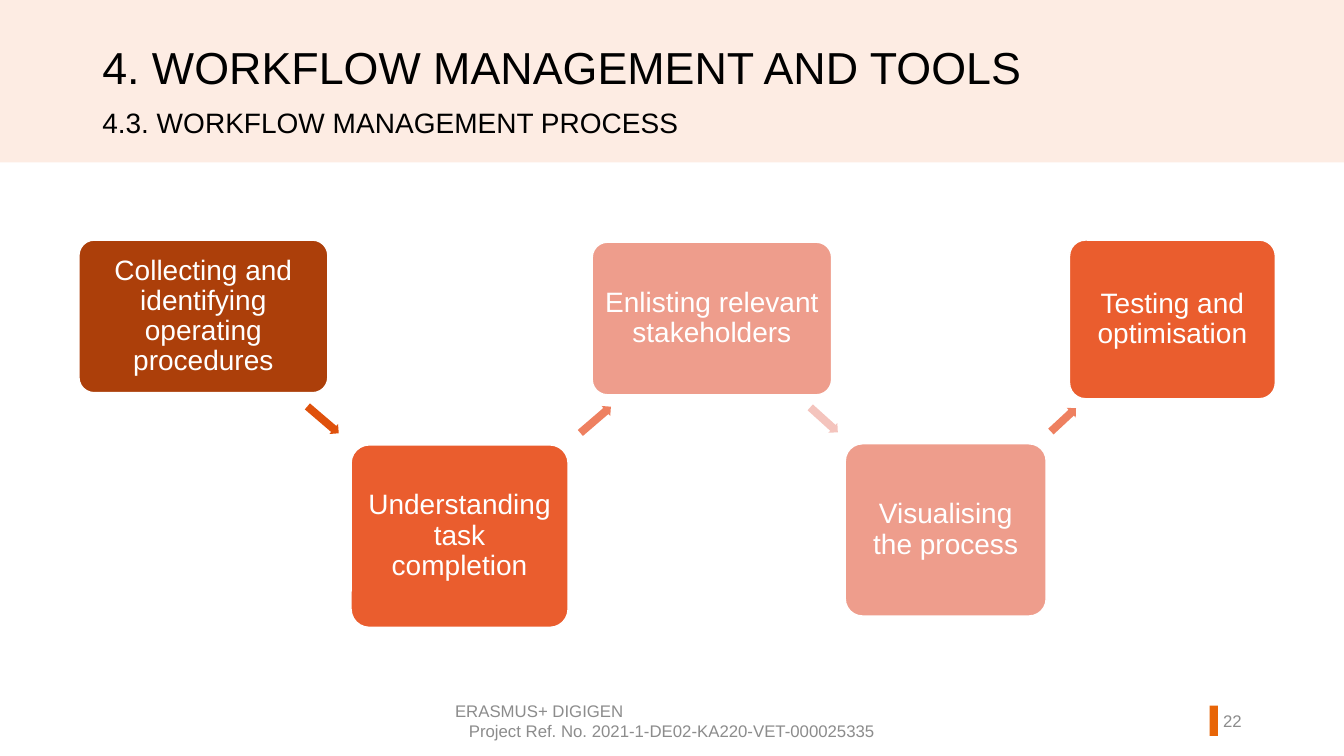
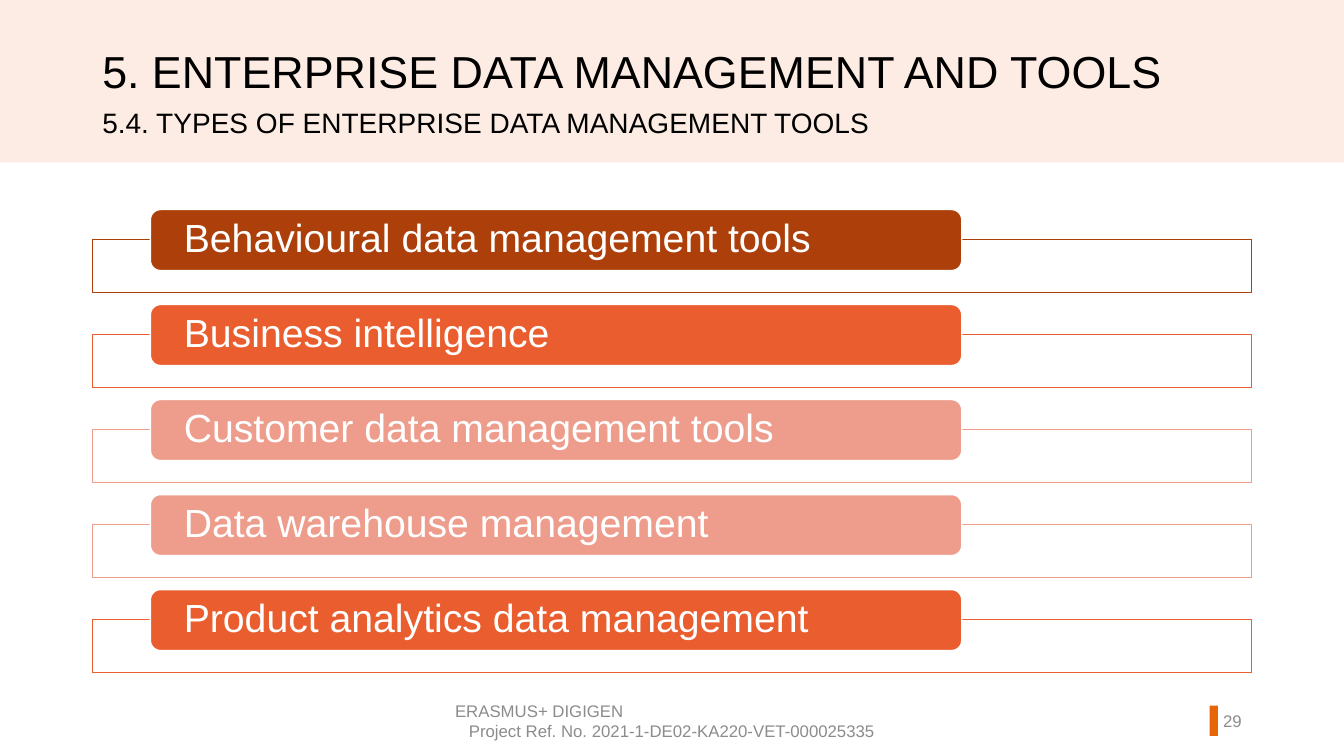
from dataclasses import dataclass
from typing import Any

from lxml.etree import SubElement
from pptx import Presentation
from pptx.dml.color import RGBColor
from pptx.enum.shapes import MSO_SHAPE
from pptx.enum.text import MSO_ANCHOR, PP_ALIGN
from pptx.oxml.ns import qn
from pptx.util import Pt


@dataclass(frozen=True)
class Theme:
    font: str = "Arial"
    black: str = "000000"
    white: str = "FFFFFF"
    grey: str = "8C8C8C"
    band: str = "FDECE3"
    marker: str = "E86507"
    brown: str = "AC3F0A"
    orange: str = "EA5D2E"
    salmon: str = "EE9D8C"
    arrow_dark: str = "DF510C"
    arrow_mid: str = "EE8060"
    arrow_pale: str = "F4C4BD"
    title_size: float = 32
    subtitle_size: float = 20
    step_size: float = 20
    tool_size: float = 28
    footer_size: float = 12


@dataclass(frozen=True)
class Area:
    left: float
    top: float
    width: float
    height: float

    def lengths(self) -> tuple:
        return Pt(self.left), Pt(self.top), Pt(self.width), Pt(self.height)


@dataclass(frozen=True)
class Step:
    text: str
    color: str
    area: Area


@dataclass(frozen=True)
class Arrow:
    left: float
    width: float
    angle: float
    color: str


@dataclass(frozen=True)
class Tool:
    text: str
    color: str


THEME = Theme()
LEFT, CENTER, RIGHT = PP_ALIGN.LEFT, PP_ALIGN.CENTER, PP_ALIGN.RIGHT

FOOTER = [
    ("ERASMUS+ DIGIGEN", LEFT),
    ("Project Ref. No. 2021-1-DE02-KA220-VET-000025335", CENTER),
]

STEPS = [
    Step("Collecting and identifying operating procedures", THEME.brown,
         Area(56.4, 171.5, 177.8, 109)),
    Step("Understanding task completion", THEME.orange, Area(250.8, 317.8, 155, 130.3)),
    Step("Enlisting relevant stakeholders", THEME.salmon, Area(423, 173, 171, 109)),
    Step("Visualising the process", THEME.salmon, Area(603.8, 317, 143.5, 123)),
    Step("Testing and optimisation", THEME.orange, Area(764, 171.5, 147, 113.3)),
]

ARROW_TOP, ARROW_HEIGHT = 295.2, 9.4
ARROWS = [
    Arrow(216, 29.5, 40.6, THEME.arrow_dark),
    Arrow(411.1, 28.8, 319.3, THEME.arrow_mid),
    Arrow(575.3, 26.6, 42.1, THEME.arrow_pale),
    Arrow(747.4, 24.5, 317.1, THEME.arrow_mid),
]

TOOLS = [
    Tool("Behavioural data management tools", THEME.brown),
    Tool("Business intelligence", THEME.orange),
    Tool("Customer data management tools", THEME.salmon),
    Tool("Data warehouse management", THEME.salmon),
    Tool("Product analytics data management", THEME.orange),
]
TOOL_TOP, TOOL_PITCH, FRAME_DROP = 149.7, 67.86, 21.5


# Formatting helpers

def apply(target: Any, values: dict) -> None:
    for name, value in values.items():
        setattr(target, name, value)


def write(box: Any, lines: list, size: float, color: str, spacing: float = 1.0,
          anchor: Any = MSO_ANCHOR.MIDDLE, insets: tuple = (7.2, 3.6)) -> None:
    """Fill a shape with (text, alignment) paragraphs."""
    across, down = Pt(insets[0]), Pt(insets[1])
    frame = box.text_frame
    apply(frame, {"word_wrap": True, "vertical_anchor": anchor,
                  "margin_left": across, "margin_right": across,
                  "margin_top": down, "margin_bottom": down})
    for index, (text, alignment) in enumerate(lines):
        para = frame.add_paragraph() if index else frame.paragraphs[0]
        apply(para, {"alignment": alignment, "line_spacing": spacing})
        span = para.add_run()
        span.text = text
        apply(span.font, {"name": THEME.font, "size": Pt(size)})
        span.font.color.rgb = RGBColor.from_string(color)


def add_block(shapes: Any, kind: Any, area: Area, fill: str, line: str = "") -> Any:
    block = shapes.add_shape(kind, *area.lengths())
    block.shadow.inherit = False
    block.fill.solid()
    block.fill.fore_color.rgb = RGBColor.from_string(fill)
    if line:
        block.line.color.rgb = RGBColor.from_string(line)
        block.line.width = Pt(1)
    else:
        block.line.fill.background()
    return block


def set_opacity(block: Any, percent: int) -> None:
    color = block.fill._xPr.find(qn("a:solidFill"))[0]
    SubElement(color, qn("a:alpha")).set("val", str(percent * 1000))


# Parts shared by the slides

def add_page(deck: Any, title: str, subtitle: str, number: int, title_top: float) -> Any:
    page = deck.slides.add_slide(deck.slide_layouts[6])
    add_block(page.shapes, MSO_SHAPE.RECTANGLE, Area(0, 0, 960, 116), THEME.band)
    add_block(page.shapes, MSO_SHAPE.RECTANGLE, Area(864, 504, 6, 21.6), THEME.marker)

    for text, top, size in ((title, title_top, THEME.title_size),
                            (subtitle, 74.2, THEME.subtitle_size)):
        box = page.shapes.add_textbox(*Area(66, top, 781, 61).lengths())
        write(box, [(text, LEFT)], size, THEME.black, 0.9, MSO_ANCHOR.TOP)

    for lines, left, width in ((FOOTER, 318, 324), ([(str(number), RIGHT)], 847.2, 46.8)):
        box = page.shapes.add_textbox(*Area(left, 500.5, width, 28.8).lengths())
        write(box, lines, THEME.footer_size, THEME.grey)
    return page


# Zigzag process

def draw_process(page: Any) -> None:
    group = page.shapes.add_group_shape()
    for step in STEPS:
        card = add_block(group.shapes, MSO_SHAPE.ROUNDED_RECTANGLE, step.area,
                         step.color, THEME.white)
        card.adjustments[0] = 0.1
        write(card, [(step.text, CENTER)], THEME.step_size, THEME.white, 0.9,
              insets=(6, 6))
    for arrow in ARROWS:
        area = Area(arrow.left, ARROW_TOP, arrow.width, ARROW_HEIGHT)
        pointer = add_block(group.shapes, MSO_SHAPE.RIGHT_ARROW, area, arrow.color)
        pointer.adjustments[0] = 0.6
        pointer.rotation = arrow.angle


# List of tools, each label over a frame

def draw_tools(page: Any) -> None:
    group = page.shapes.add_group_shape()
    for index, tool in enumerate(TOOLS):
        top = TOOL_TOP + index * TOOL_PITCH
        frame = add_block(group.shapes, MSO_SHAPE.RECTANGLE,
                          Area(66, top + FRAME_DROP, 828, 37.8), THEME.white, tool.color)
        set_opacity(frame, 90)
        label = add_block(group.shapes, MSO_SHAPE.ROUNDED_RECTANGLE,
                          Area(107.4, top, 579.6, 43.6), tool.color, THEME.white)
        write(label, [(tool.text, LEFT)], THEME.tool_size, THEME.white, 0.9,
              insets=(21.8, 0))


def main() -> None:
    deck = Presentation()
    apply(deck, {"slide_width": Pt(960), "slide_height": Pt(540)})
    draw_process(add_page(deck, "4. WORKFLOW MANAGEMENT AND TOOLS",
                          "4.3. WORKFLOW MANAGEMENT PROCESS", 22, 29.5))
    draw_tools(add_page(deck, "5. ENTERPRISE DATA MANAGEMENT AND TOOLS",
                        "5.4. TYPES OF ENTERPRISE DATA MANAGEMENT TOOLS", 29, 31.7))
    deck.save("out.pptx")


if __name__ == "__main__":
    main()
